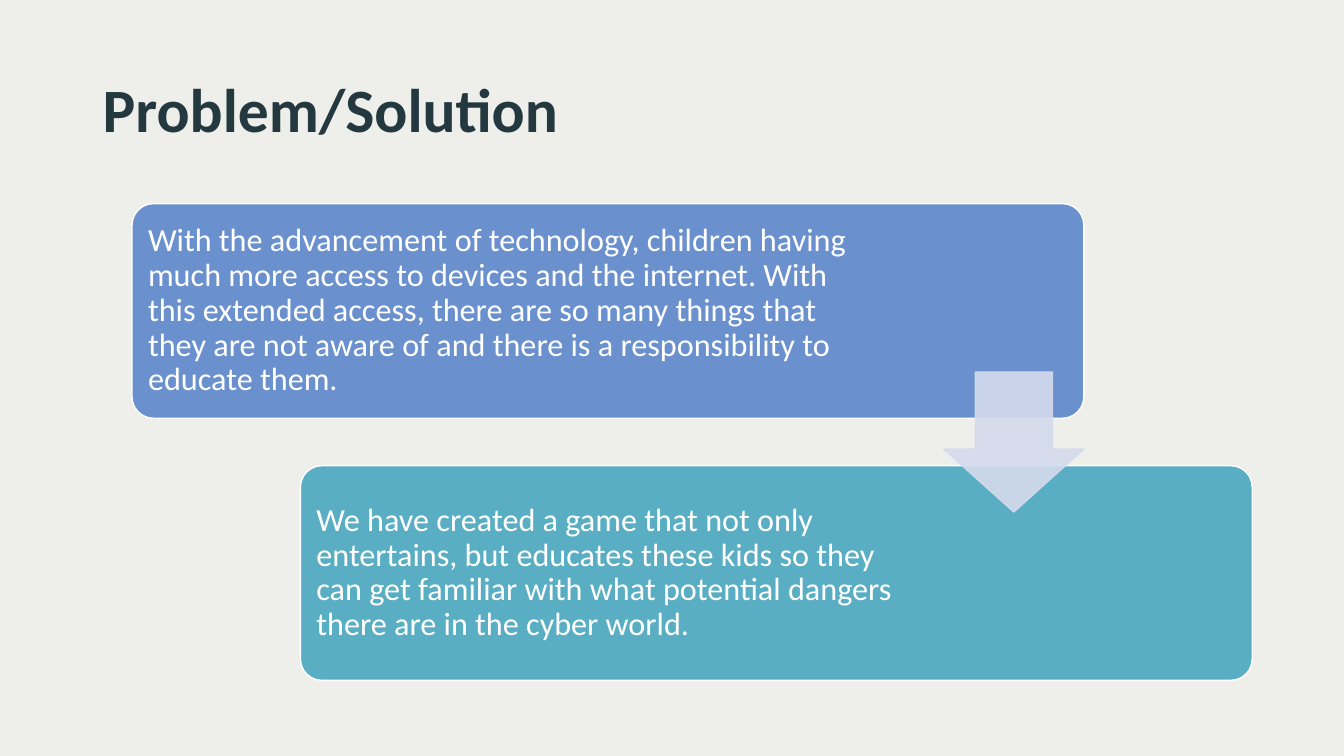
from lxml.etree import SubElement
from pptx import Presentation
from pptx.dml.color import RGBColor
from pptx.enum.shapes import MSO_SHAPE as Shape
from pptx.enum.text import MSO_ANCHOR as Anchor
from pptx.oxml.ns import qn
from pptx.util import Inches, Pt

deck = Presentation()
deck.slide_width, deck.slide_height = Inches(13.33), Inches(7.5)
page = deck.slides.add_slide(deck.slide_layouts[6])


def add_panel(kind, place, fill, line=None, opacity=100, adjust=()):
    panel = page.shapes.add_shape(kind, *map(Inches, place))
    panel.shadow.inherit = False
    for index, value in enumerate(adjust):
        panel.adjustments[index] = value
    paints = [panel.fill]
    if line:
        panel.line.width = Pt(1)
        paints.append(panel.line.fill)
    else:
        panel.line.fill.background()
    for paint, color in zip(paints, (fill, line)):
        paint.solid()
        paint.fore_color.rgb = RGBColor.from_string(color)
    if opacity < 100:
        for tint in panel.element.spPr.iter(qn("a:srgbClr")):
            SubElement(tint, qn("a:alpha"), val=str(opacity * 1000))


def add_text(text, place, size, color, bold=False, anchor=Anchor.TOP, inset=0.1, spacing=1.0):
    frame = page.shapes.add_textbox(*map(Inches, place)).text_frame
    frame.word_wrap = True
    frame.vertical_anchor = anchor
    frame.margin_left = frame.margin_right = Inches(0.1)
    frame.margin_top = frame.margin_bottom = Inches(inset)
    para = frame.paragraphs[0]
    para.line_spacing = spacing
    span = para.add_run()
    span.text = text
    span.font.name = "Calibri"
    span.font.size = Pt(size)
    span.font.bold = bold
    span.font.color.rgb = RGBColor.from_string(color)


# Background: white under a translucent warm grey
for color, opacity in (("FFFFFF", 100), ("E8E8E2", 70)):
    add_panel(Shape.RECTANGLE, (0, 0, 13.33, 7.5), color, opacity=opacity)

# Title
add_text("Problem/Solution", (0.92, 0.61, 11.32, 1.4), 44, "24393F", bold=True, inset=0.09)

# Problem and solution cards
cards = [
    (1.31, 2.02, 7.24, "6A90CE",
     "With the advancement of technology, children having much more access to devices "
     "and the internet. With this extended access, there are so many things that they "
     "are not aware of and there is a responsibility to educate them."),
    (2.98, 4.62, 6.26, "5AAEC3",
     "We have created a game that not only entertains, but educates these kids so they "
     "can get familiar with what potential dangers there are in the cyber world."),
]
for left, top, text_width, color, text in cards:
    add_panel(Shape.ROUNDED_RECTANGLE, (left, top, 9.44, 2.13), color,
              line="FFFFFF", adjust=(0.1,))
    add_text(text, (left + 0.06, top + 0.06, text_width, 2.01), 23, "FFFFFF",
             anchor=Anchor.MIDDLE, spacing=0.9)

# Arrow from problem to solution
add_panel(Shape.DOWN_ARROW, (9.36, 3.69, 1.39, 1.39), "D4DBED", line="D4DBED",
          opacity=90, adjust=(0.55, 0.45))

deck.save("out.pptx")
